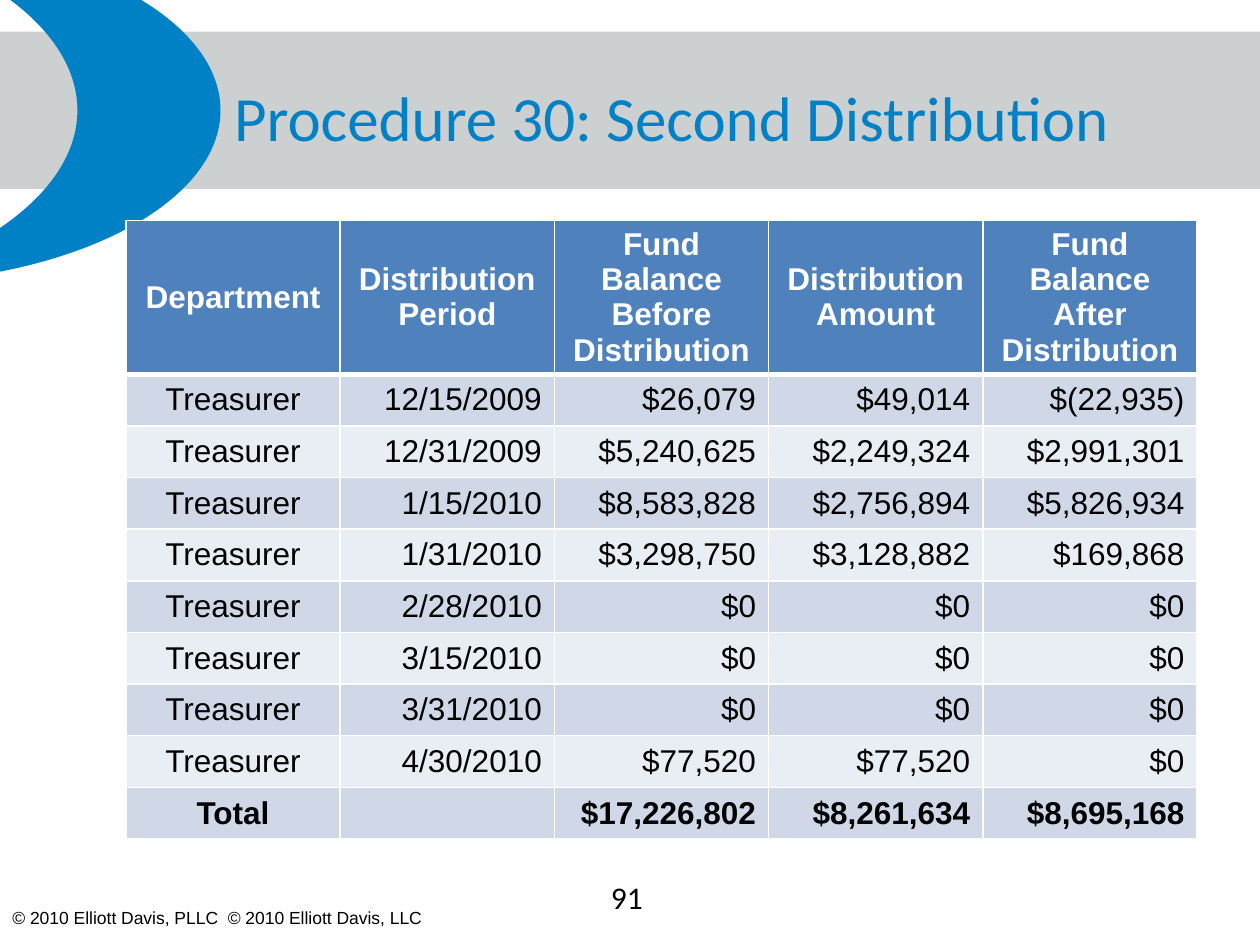
"""Build the second distribution slide with its fund balance table."""
from dataclasses import dataclass

import lxml.etree
import pptx
import pptx.dml.color
import pptx.enum.shapes
import pptx.enum.text
import pptx.oxml.ns
import pptx.util

WIDTH, HEIGHT = 10, 7.5
COLORS = {
    "band": "C8CBCB", "blue": "0081C6", "header": "4F81BD", "odd": "D0D8E8",
    "even": "E9EDF4", "white": "FFFFFF", "black": "000000",
}
ALIGN = pptx.enum.text.PP_ALIGN
SHAPE = pptx.enum.shapes.MSO_SHAPE
ANCHOR = pptx.enum.text.MSO_ANCHOR
ROW_HEIGHT = 0.41
HEADERS = (
    "Department", "Distribution Period", "Fund Balance Before Distribution",
    "Distribution Amount", "Fund Balance After Distribution",
)
PERIODS = (
    ("12/15/2009", "$26,079", "$49,014", "$(22,935)"),
    ("12/31/2009", "$5,240,625", "$2,249,324", "$2,991,301"),
    ("1/15/2010", "$8,583,828", "$2,756,894", "$5,826,934"),
    ("1/31/2010", "$3,298,750", "$3,128,882", "$169,868"),
    ("2/28/2010", "$0", "$0", "$0"),
    ("3/15/2010", "$0", "$0", "$0"),
    ("3/31/2010", "$0", "$0", "$0"),
    ("4/30/2010", "$77,520", "$77,520", "$0"),
)
TOTAL = ("Total", "", "$17,226,802", "$8,261,634", "$8,695,168")


@dataclass(frozen=True)
class Box:
    """A rectangle in shares of the slide's width and height."""

    x: float
    y: float
    w: float
    h: float

    def emu(self) -> tuple[int, ...]:
        """Return left, top, width and height as lengths."""
        sizes = (self.x * WIDTH, self.y * HEIGHT, self.w * WIDTH, self.h * HEIGHT)
        return tuple(pptx.util.Inches(v) for v in sizes)


@dataclass(frozen=True)
class Style:
    """The look of one paragraph of text."""

    size: float
    name: str
    color: str
    bold: bool = False
    align: ALIGN = ALIGN.LEFT


@dataclass(frozen=True)
class Ornament:
    """A filled background shape."""

    kind: SHAPE
    box: Box
    color: str
    alpha: int = 100
    rotation: float = 0
    adjustments: tuple[float, ...] = ()


@dataclass(frozen=True)
class Label:
    """A text box with one line."""

    text: str
    box: Box
    style: Style
    wrap: bool = True


ORNAMENTS = (
    Ornament(SHAPE.RECTANGLE, Box(0, 1 / 30, 1, 1 / 6), "band", alpha=90),
    Ornament(SHAPE.MOON, Box(-0.1, -1 / 15, 0.275, 11 / 30), "blue",
             rotation=180, adjustments=(0.413,)),
)
LABELS = (
    Label("© 2010 Elliott Davis, PLLC  © 2010 Elliott Davis, LLC",
          Box(0, 7.15 / HEIGHT, 0.358, 0.27 / HEIGHT), Style(10, "Arial", "black"), False),
    Label("91", Box(0.475, 6.92 / HEIGHT, 0.05, 0.4 / HEIGHT), Style(18, "Calibri", "black")),
)
TITLE = Label("Procedure 30: Second Distribution", Box(0.083, 0.04, 0.9, 1 / 6),
              Style(36, "Calibri", "blue", align=ALIGN.CENTER))
TABLE_BOX = Box(0.1, 1.75 / HEIGHT, 0.85, 0.62)


def rgb(key: str) -> pptx.dml.color.RGBColor:
    """Look up a named colour."""
    return pptx.dml.color.RGBColor.from_string(COLORS[key])


def sub(parent, tag: str, **attrs: str):
    """Append a DrawingML element to a parent."""
    return lxml.etree.SubElement(parent, pptx.oxml.ns.qn(tag), attrs)


def write(tf, text: str, style: Style) -> None:
    """Put styled text in a frame."""
    p = tf.paragraphs[0]
    p.alignment = style.align
    r = p.add_run()
    r.text = text
    values = {"size": pptx.util.Pt(style.size), "name": style.name, "bold": style.bold}
    for key, value in values.items():
        setattr(r.font, key, value)
    r.font.color.rgb = rgb(style.color)


def draw_ornament(s, item: Ornament) -> None:
    """Draw a background shape."""
    sp = s.shapes.add_shape(item.kind, *item.box.emu())
    sp.shadow.inherit = False
    sp.rotation = item.rotation
    for i, value in enumerate(item.adjustments):
        sp.adjustments[i] = value
    sp.fill.solid()
    sp.fill.fore_color.rgb = rgb(item.color)
    sp.line.fill.background()
    if item.alpha < 100:
        color = sp.element.spPr.find(".//" + pptx.oxml.ns.qn("a:srgbClr"))
        sub(color, "a:alpha", val=str(item.alpha * 1000))


def draw_label(s, label: Label) -> None:
    """Draw a text box."""
    tf = s.shapes.add_textbox(*label.box.emu()).text_frame
    tf.word_wrap = label.wrap
    write(tf, label.text, label.style)


def draw_title(s, label: Label) -> None:
    """Place the title placeholder above the background shapes."""
    sp = s.shapes.title
    for key, value in zip(("left", "top", "width", "height"), label.box.emu()):
        setattr(sp, key, value)
    sp.text_frame.word_wrap = True
    sp.text_frame.vertical_anchor = ANCHOR.MIDDLE
    write(sp.text_frame, label.text, label.style)
    s.shapes.element.append(sp.element)


def draw_borders(cell, widths: dict[str, float]) -> None:
    """Give a cell white borders of the given widths."""
    tc_pr = cell._tc.get_or_add_tcPr()
    for side, width in widths.items():
        ln = sub(tc_pr, f"a:ln{side}", w=str(pptx.util.Pt(width)))
        sub(sub(ln, "a:solidFill"), "a:srgbClr", val=COLORS["white"])


def draw_table(s, box: Box, rows: list[tuple[str, ...]]) -> None:
    """Draw the banded table with a header row and a bold last row."""
    frame = s.shapes.add_table(len(rows), len(rows[0]), *box.emu())
    table = frame.table
    for row in table.rows:
        row.height = pptx.util.Inches(ROW_HEIGHT)
    frame.height = box.emu()[3]
    for i, row in enumerate(rows):
        header = i == 0
        fill = "header" if header else "odd" if i % 2 else "even"
        for j, text in enumerate(row):
            cell = table.cell(i, j)
            draw_borders(cell, {"L": 1, "R": 1, "T": 3 if i == 1 else 1, "B": 3 if header else 1})
            cell.fill.solid()
            cell.fill.fore_color.rgb = rgb(fill)
            cell.vertical_anchor = ANCHOR.MIDDLE
            align = ALIGN.CENTER if header or j == 0 else ALIGN.RIGHT
            color = "white" if header else "black"
            bold = header or i == len(rows) - 1
            write(cell.text_frame, text, Style(18, "Arial", color, bold, align))


def main() -> None:
    """Assemble and save the slide."""
    prs = pptx.Presentation()
    prs.slide_width, prs.slide_height = pptx.util.Inches(WIDTH), pptx.util.Inches(HEIGHT)
    s = prs.slides.add_slide(prs.slide_layouts.get_by_name("Title Only"))
    for item in ORNAMENTS:
        draw_ornament(s, item)
    draw_title(s, TITLE)
    draw_table(s, TABLE_BOX, [HEADERS, *(("Treasurer", *p) for p in PERIODS), TOTAL])
    for label in LABELS:
        draw_label(s, label)
    prs.save("out.pptx")


if __name__ == "__main__":
    main()
